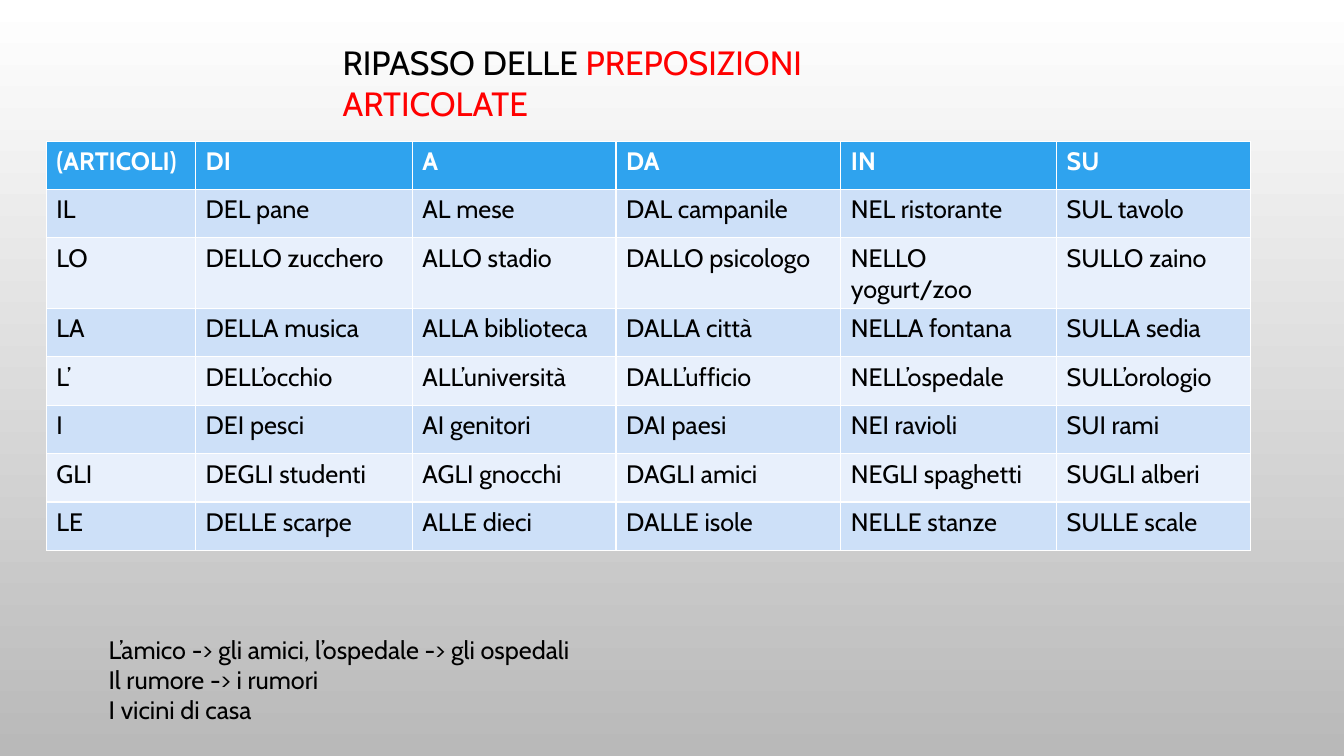
from pptx import Presentation
from pptx.dml.color import RGBColor
from pptx.enum.text import MSO_AUTO_SIZE as Auto
from pptx.util import Inches, Pt

FONT = "Cabin"
BLACK, WHITE, RED = "000000", "FFFFFF", "FF0000"
HEAD, BANDS = "2FA3EE", ("CDE0F8", "E8F0FC")

TITLE = [("RIPASSO DELLE ", BLACK), ("PREPOSIZIONI ARTICOLATE", RED)]
WIDTHS = [1.48, 2.15, 2.02, 2.23, 2.14, 1.92]
ROW_H = 0.48
ROWS = [
    ("(ARTICOLI)", "DI", "A", "DA", "IN", "SU"),
    ("IL", "DEL pane", "AL mese", "DAL campanile", "NEL ristorante", "SUL tavolo"),
    ("LO", "DELLO zucchero", "ALLO stadio", "DALLO psicologo", "NELLO yogurt/zoo", "SULLO zaino"),
    ("LA", "DELLA musica", "ALLA biblioteca", "DALLA città", "NELLA fontana", "SULLA sedia"),
    ("L’", "DELL’occhio", "ALL’università", "DALL’ufficio", "NELL’ospedale", "SULL’orologio"),
    ("I", "DEI pesci", "AI genitori", "DAI paesi", "NEI ravioli", "SUI rami"),
    ("GLI", "DEGLI studenti", "AGLI gnocchi", "DAGLI amici", "NEGLI spaghetti", "SUGLI alberi"),
    ("LE", "DELLE scarpe", "ALLE dieci", "DALLE isole", "NELLE stanze", "SULLE scale"),
]
NOTES = [
    [("L’amico -> gli amici, l’ospedale -> gli ospedali", BLACK)],
    [("Il rumore -> i rumori", BLACK)],
    [("I vicini di casa", BLACK)],
]


def rgb(code):
    return RGBColor.from_string(code)


def style(font, size, color, bold=False):
    font.name, font.size, font.bold = FONT, Pt(size), bold
    font.color.rgb = rgb(color)


def add_text(slide, place, lines, size):
    frame = slide.shapes.add_textbox(*map(Inches, place)).text_frame
    frame.word_wrap = True
    frame.auto_size = Auto.SHAPE_TO_FIT_TEXT
    for i, line in enumerate(lines):
        para = frame.add_paragraph() if i else frame.paragraphs[0]
        style(para.font, size, line[0][1])
        for words, color in line:
            run = para.add_run()
            run.text = words
            style(run.font, size, color)


def add_grid(slide, left, top):
    size = (sum(WIDTHS), ROW_H * len(ROWS))
    table = slide.shapes.add_table(
        len(ROWS), len(WIDTHS), *map(Inches, (left, top, *size))).table
    for col, width in zip(table.columns, WIDTHS):
        col.width = Inches(width)
    for r, row in enumerate(ROWS):
        table.rows[r].height = Inches(ROW_H)
        for c, words in enumerate(row):
            cell = table.cell(r, c)
            cell.text = words
            cell.fill.solid()
            cell.fill.fore_color.rgb = rgb(BANDS[(r - 1) % 2] if r else HEAD)
            style(cell.text_frame.paragraphs[0].font, 18,
                  BLACK if r else WHITE, r == 0)


def main():
    deck = Presentation()
    deck.slide_width, deck.slide_height = Inches(13.33), Inches(7.5)
    slide = deck.slides.add_slide(deck.slide_layouts[6])

    # Background, white at the top to grey
    back = slide.background.fill
    back.gradient()
    back.gradient_angle = 270
    for stop, color in zip(back.gradient_stops, (WHITE, "B9B9B9")):
        stop.color.rgb = rgb(color)

    # Title, table and examples
    add_text(slide, (3.3, 0.37, 6.26, 0.5), [TITLE], 24)
    add_grid(slide, 0.46, 1.4)
    add_text(slide, (0.98, 6.24, 5.98, 1.01), NOTES, 18)
    deck.save("out.pptx")


if __name__ == "__main__":
    main()
